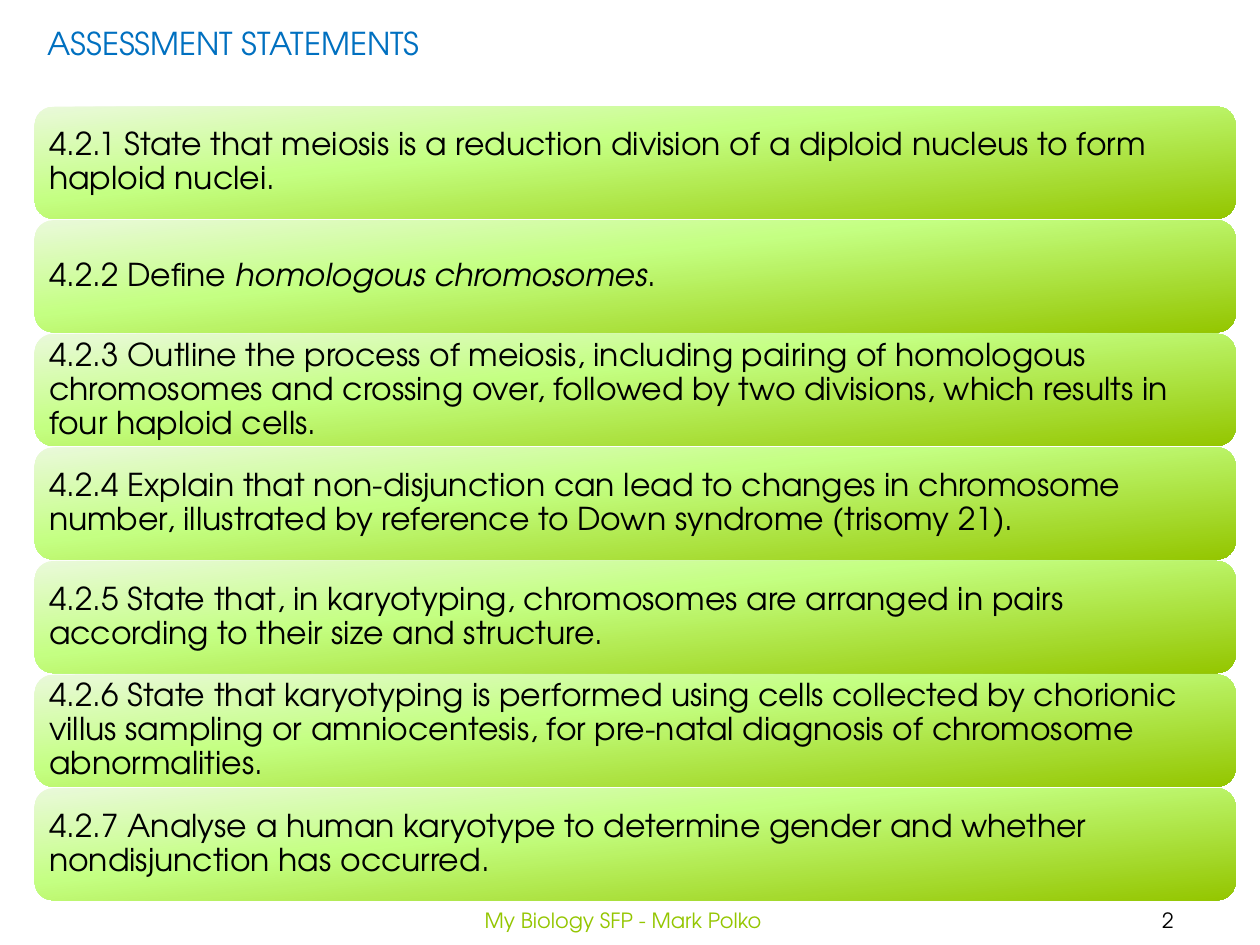
from copy import deepcopy

from pptx import Presentation
from pptx.dml.color import RGBColor
from pptx.enum.shapes import MSO_SHAPE
from pptx.enum.text import MSO_ANCHOR, PP_ALIGN
from pptx.oxml.ns import qn
from pptx.util import Cm, Pt

FONT = "TeX Gyre Adventor"
COLORS = {
    "title": "0070C0",
    "body": "000000",
    "footer": "94C600",
}
BAR_GRADIENT = [(0, "EAF9DA"), (0.4, "C4FF82"), (1, "94C600")]
GRADIENT_ANGLE = 360 - 84  # python-pptx counts counter-clockwise

# Each statement is a list of (wording, italic) pieces
STATEMENTS = [
    [("4.2.1 State that meiosis is a reduction division of a diploid nucleus "
      "to form haploid nuclei.", False)],
    [("4.2.2 Define ", False), ("homologous chromosomes", True), (".", False)],
    [("4.2.3 Outline the process of meiosis, including pairing of homologous "
      "chromosomes and crossing over, followed by two divisions, which results "
      "in four haploid cells.", False)],
    [("4.2.4 Explain that non-disjunction can lead to changes in chromosome "
      "number, illustrated by reference to Down syndrome (trisomy 21).", False)],
    [("4.2.5 State that, in karyotyping, chromosomes are arranged in pairs "
      "according to their size and structure.", False)],
    [("4.2.6 State that karyotyping is performed using cells collected by "
      "chorionic villus sampling or amniocentesis, for pre-natal diagnosis of "
      "chromosome abnormalities.", False)],
    [("4.2.7 Analyse a human karyotype to determine gender and whether "
      "nondisjunction has occurred.", False)],
]

# Wording, box in cm, point size, colour, frame format, paragraph format
CENTRED = {"alignment": PP_ALIGN.CENTER}
MIDDLE = {"vertical_anchor": MSO_ANCHOR.MIDDLE, "word_wrap": True}
LABELS = [
    ("2", (21.69, 18.03, 3.71, 1.02), 12, "body", MIDDLE, CENTRED),
    ("My Biology SFP - Mark Polko", (7.7, 18.03, 9.73, 1.02), 12, "footer",
     MIDDLE, CENTRED),
    ("ASSESSMENT STATEMENTS", (0.71, 0.36, 8.15, 1.8), 18, "title",
     {"word_wrap": False}, {}),
]

BAR_LEFT, BAR_TOP, BAR_WIDTH, BAR_HEIGHT = 0.7, 2.15, 24.21, 2.26
BAR_PITCH = 2.29
BAR_FRAME = MIDDLE | {
    f"margin_{side}": Cm(0.18) for side in ("left", "top", "right", "bottom")
}
BAR_PARAGRAPH = {"alignment": PP_ALIGN.LEFT, "line_spacing": 0.9}


def apply(target, formats):
    for attribute, value in formats.items():
        setattr(target, attribute, value)


def write(holder, pieces, size, color, frame_format, paragraph_format):
    frame = holder.text_frame
    apply(frame, frame_format)
    paragraph = frame.paragraphs[0]
    apply(paragraph, paragraph_format)
    for wording, italic in pieces:
        run = paragraph.add_run()
        run.text = wording
        apply(run.font, {"name": FONT, "size": Pt(size), "italic": italic})
        run.font.color.rgb = RGBColor.from_string(COLORS[color])


def fill_with_gradient(bar):
    bar.fill.gradient()
    bar.fill.gradient_angle = GRADIENT_ANGLE
    stop_list = bar.fill._xPr.find(qn("a:gradFill")).find(qn("a:gsLst"))
    stop_list.append(deepcopy(stop_list[0]))  # a new gradient has two stops
    for stop, (position, color) in zip(bar.fill.gradient_stops, BAR_GRADIENT):
        stop.position = position
        stop.color.rgb = RGBColor.from_string(color)


def main():
    deck = Presentation()
    apply(deck, {"slide_width": Cm(25.4), "slide_height": Cm(19.05)})
    shapes = deck.slides.add_slide(deck.slide_layouts[6]).shapes

    for wording, box, size, color, frame_format, paragraph_format in LABELS:
        label = shapes.add_textbox(*map(Cm, box))
        write(label, [(wording, False)], size, color, frame_format, paragraph_format)

    for row, statement in enumerate(STATEMENTS):
        box = (BAR_LEFT, BAR_TOP + row * BAR_PITCH, BAR_WIDTH, BAR_HEIGHT)
        bar = shapes.add_shape(MSO_SHAPE.ROUNDED_RECTANGLE, *map(Cm, box))
        bar.shadow.inherit = False
        bar.line.fill.background()
        fill_with_gradient(bar)
        write(bar, statement, 18, "body", BAR_FRAME, BAR_PARAGRAPH)

    deck.save("out.pptx")


if __name__ == "__main__":
    main()
